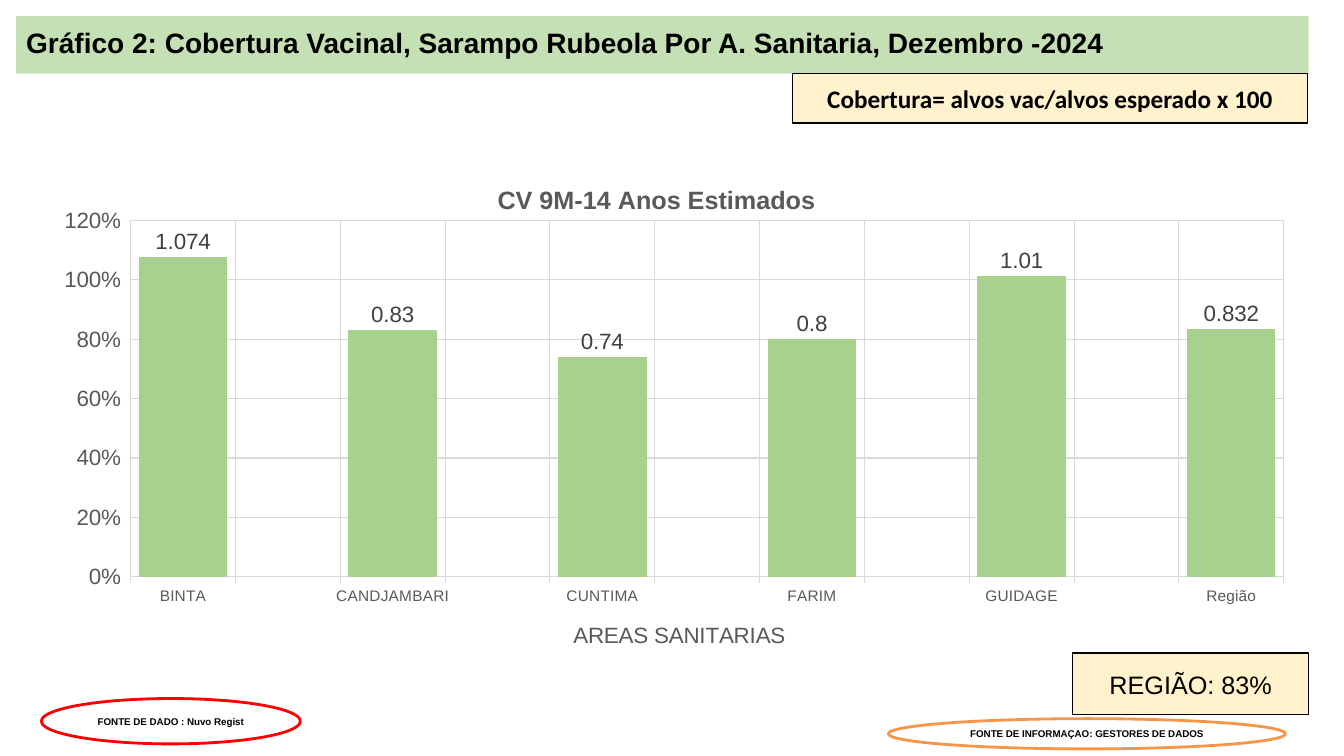
import pptx
import pptx.chart.data
import pptx.dml.color
import pptx.enum.chart
import pptx.enum.shapes
import pptx.enum.text
import pptx.oxml
import pptx.oxml.ns
import pptx.util

RGBColor = pptx.dml.color.RGBColor
Pt = pptx.util.Pt
SHAPE = pptx.enum.shapes.MSO_SHAPE
ALIGN = pptx.enum.text.PP_ALIGN
qn = pptx.oxml.ns.qn

PX = 9144  # EMU per px, 100 px to the inch

BLACK = RGBColor(0x00, 0x00, 0x00)
WHITE = RGBColor(0xFF, 0xFF, 0xFF)
BANNER = RGBColor(0xC5, 0xE0, 0xB4)
CREAM = RGBColor(0xFF, 0xF2, 0xCC)
ORANGE = RGBColor(0xF7, 0x96, 0x46)
RED = RGBColor(0xFF, 0x00, 0x00)
BAR = RGBColor(0xA9, 0xD1, 0x8E)
GRID = RGBColor(0xD9, 0xD9, 0xD9)
GREY = RGBColor(0x59, 0x59, 0x59)
LABEL = RGBColor(0x40, 0x40, 0x40)

COVERAGE = {"BINTA": 1.074, "CANDJAMBARI": 0.83, "CUNTIMA": 0.74,
            "FARIM": 0.8, "GUIDAGE": 1.01, "Região": 0.832}


def set_font(font, size, color, bold=False, name="Arial"):
    font.size = Pt(size)
    font.name = name
    font.bold = bold
    font.color.rgb = color


def set_line(line, color, width=0.75):
    line.color.rgb = color
    line.width = Pt(width)


def write(sp, text, size, align, bold=False, name="Arial"):
    tf = sp.text_frame
    tf.text = text
    tf.word_wrap = True
    tf.auto_size = pptx.enum.text.MSO_AUTO_SIZE.NONE
    tf.vertical_anchor = pptx.enum.text.MSO_ANCHOR.MIDDLE
    p = tf.paragraphs[0]
    p.alignment = align
    set_font(p.runs[0].font, size, BLACK, bold, name)
    return p


def add_title(slide, text, x, y, w, h):
    sp = slide.shapes.title
    sp.left, sp.top, sp.width, sp.height = [v * PX for v in (x, y, w, h)]
    sp.fill.solid()
    sp.fill.fore_color.rgb = BANNER
    write(sp, text, 20, ALIGN.LEFT, True).line_spacing = 0.9


def add_box(slide, kind, box, text, size, fill, line, width, bold=False, name="Arial"):
    sp = slide.shapes.add_shape(kind, *[v * PX for v in box])
    sp.shadow.inherit = False
    if fill is None:
        sp.fill.background()
    else:
        sp.fill.solid()
        sp.fill.fore_color.rgb = fill
    set_line(sp.line, line, width)
    write(sp, text, size, ALIGN.CENTER, bold, name)


def place(element, x, y, w=None, h=None):
    """Give a chart part a manual layout, in fractions of the chart."""
    for old in element.findall(qn("c:layout")):
        element.remove(old)
    modes = '<c:xMode val="edge"/><c:yMode val="edge"/>'
    sizes = f'<c:x val="{x}"/><c:y val="{y}"/>'
    if w is not None:
        modes = '<c:layoutTarget val="inner"/>' + modes
        sizes += f'<c:w val="{w}"/><c:h val="{h}"/>'
    layout = pptx.oxml.parse_xml(
        f'<c:layout {pptx.oxml.ns.nsdecls("c")}><c:manualLayout>'
        f'{modes}{sizes}</c:manualLayout></c:layout>')
    tx = element.find(qn("c:tx"))
    if tx is None:
        element.insert(0, layout)
    else:
        tx.addnext(layout)


def set_chart_title(title, text, size, bold, x, y):
    tf = title.text_frame
    tf.text = text
    set_font(tf.paragraphs[0].runs[0].font, size, GREY, bold)
    place(title._element, x, y)


def style_axis(axis, size):
    axis.has_major_gridlines = True
    set_line(axis.major_gridlines.format.line, GRID)
    axis.major_tick_mark = pptx.enum.chart.XL_TICK_MARK.OUTSIDE
    axis.minor_tick_mark = pptx.enum.chart.XL_TICK_MARK.NONE
    set_font(axis.tick_labels.font, size, GREY)


def add_coverage_chart(slide, x, y, w, h):
    # An empty category separates each pair of areas
    cats, vals = [], []
    for area, value in COVERAGE.items():
        cats += [area, ""]
        vals += [value, None]
    data = pptx.chart.data.CategoryChartData()
    data.categories = cats[:-1]
    data.add_series("Series 1", vals[:-1])
    chart = slide.shapes.add_chart(
        pptx.enum.chart.XL_CHART_TYPE.COLUMN_CLUSTERED,
        x * PX, y * PX, w * PX, h * PX, data).chart
    set_font(chart.font, 16, BLACK)
    chart.has_legend = False
    chart.has_title = True
    set_chart_title(chart.chart_title, "CV 9M-14 Anos Estimados", 18, True, 0.36, 0.01)
    chart.chart_title.include_in_layout = False
    place(chart._chartSpace.chart.plotArea, 0.075, 0.097, 0.907, 0.749)

    # Axes
    style_axis(chart.category_axis, 11)
    set_line(chart.category_axis.format.line, GRID)
    chart.category_axis.has_title = True
    set_chart_title(chart.category_axis.axis_title, "AREAS SANITARIAS", 16, False, 0.42, 0.93)
    axis = chart.value_axis
    style_axis(axis, 16)
    axis.format.line.fill.background()
    axis.minimum_scale, axis.maximum_scale, axis.major_unit = 0, 1.2, 0.2
    axis.tick_labels.number_format = "0%"
    axis.tick_labels.number_format_is_linked = False

    # Bars and their labels
    plot = chart.plots[0]
    plot.gap_width, plot.overlap = 20, -27
    plot.vary_by_categories = False
    series = plot.series[0]
    series.format.fill.solid()
    series.format.fill.fore_color.rgb = BAR
    set_line(series.format.line, BAR)
    labels = series.data_labels
    labels.show_value = True
    labels.position = pptx.enum.chart.XL_LABEL_POSITION.OUTSIDE_END
    labels.number_format = "General"
    labels.number_format_is_linked = False
    set_font(labels.font, 16, LABEL)


def main():
    prs = pptx.Presentation()
    prs.slide_width, prs.slide_height = 1333 * PX, 750 * PX
    slide = prs.slides.add_slide(prs.slide_layouts[5])

    # Heading and formula
    add_title(slide, "Gráfico 2: Cobertura Vacinal, Sarampo Rubeola Por A. Sanitaria, Dezembro -2024",
              16, 16, 1282, 57)
    add_box(slide, SHAPE.RECTANGLE, (786, 73, 511, 49),
            "Cobertura= alvos vac/alvos esperado x 100", 18, CREAM, BLACK, 1, True, "Calibri")

    # Chart between the first source note and the regional result
    add_box(slide, SHAPE.OVAL, (881, 713, 394, 30),
            "FONTE DE INFORMAÇAO: GESTORES DE DADOS", 7, WHITE, ORANGE, 2, True)
    add_coverage_chart(slide, 35, 173, 1261, 476)
    add_box(slide, SHAPE.RECTANGLE, (1064, 648, 234, 61),
            "REGIÃO: 83%", 18, CREAM, BLACK, 1)
    add_box(slide, SHAPE.OVAL, (41, 693, 257, 45),
            "FONTE DE DADO : Nuvo Regist", 7, None, RED, 2, True)

    prs.save("out.pptx")


if __name__ == "__main__":
    main()
